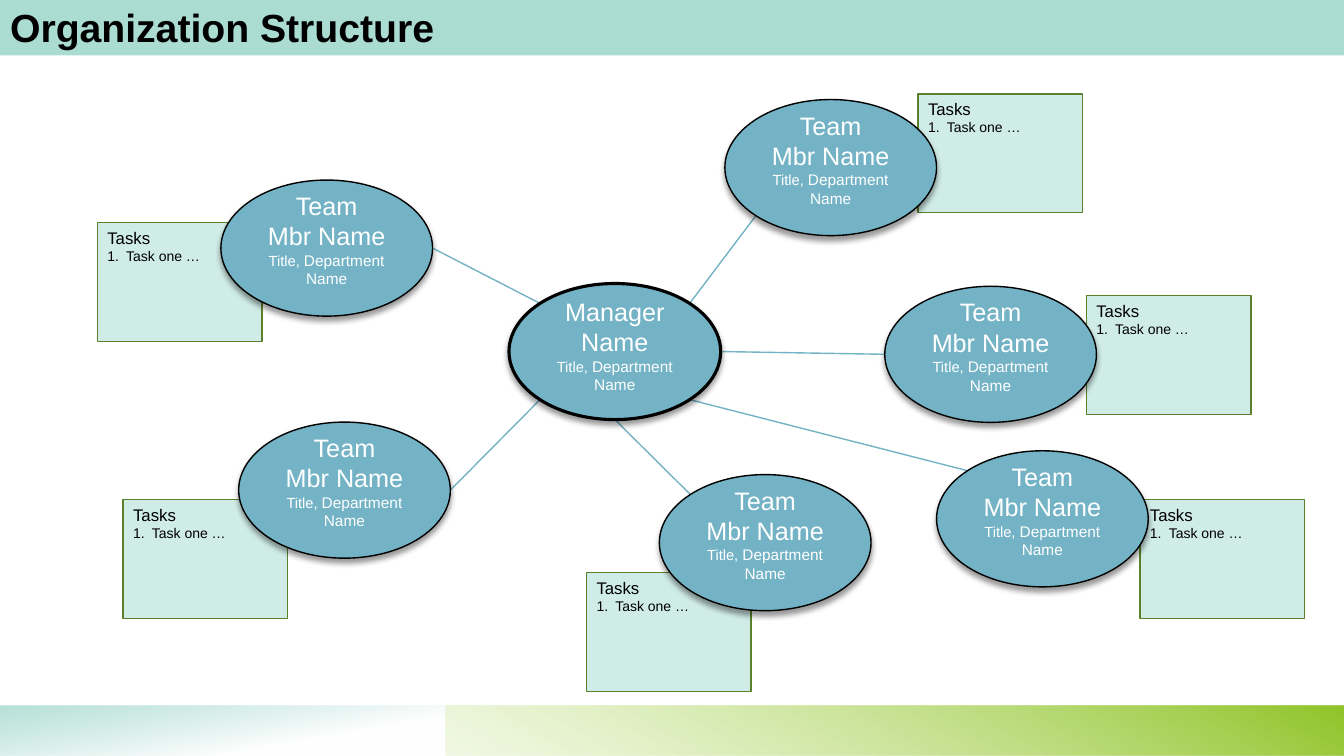
import math
from dataclasses import dataclass

import pptx
import pptx.dml.color
import pptx.enum.shapes
import pptx.enum.text
import pptx.oxml
import pptx.util
from lxml import etree

Pt = pptx.util.Pt
SHAPE = pptx.enum.shapes.MSO_SHAPE
ALIGN = pptx.enum.text.PP_ALIGN
ANCHOR = pptx.enum.text.MSO_ANCHOR
NS = "http://schemas.openxmlformats.org/drawingml/2006/main"


@dataclass(frozen=True)
class Theme:
    font: str = "Arial"
    black: str = "000000"
    white: str = "FFFFFF"
    band: str = "AADCD2"
    oval: str = "73B3C5"
    card: str = "D0ECE7"
    edge: str = "5C812C"
    pale: str = "E8F5CF"
    green: str = "91C52B"
    head: float = 28
    name: float = 18
    role: float = 11
    label: float = 10.5
    task: float = 12
    item: float = 10


THEME = Theme()
OVAL = (151.2, 97.2)
CARD = (117.6, 85)
HUB = (363.6, 202.5)
TEAM = [
    ((157.8, 128.6), (69.6, 159.1), 225, 0),
    ((517.8, 71.1), (655.8, 67), 315, 135),
    ((632, 204.5), (776, 211), 0, 180),
    ((669, 322), (814.3, 357), 45, 225),
    ((471, 339), (419, 409), 90, 225),
    ((170.5, 301.5), (88, 357), 135, 0),
]


def rgb(code):
    return pptx.dml.color.RGBColor.from_string(code)


def paint(shape, fill, edge=None, width=1):
    shape.fill.solid()
    shape.fill.fore_color.rgb = rgb(fill)
    if edge:
        shape.line.color.rgb = rgb(edge)
        shape.line.width = Pt(width)
    else:
        shape.line.fill.background()


def style(font, size, color, bold=False):
    font.name = THEME.font
    font.size = Pt(size)
    font.bold = bold
    font.color.rgb = rgb(color)


def add_form(slide, kind, spot, size):
    shape = slide.shapes.add_shape(kind, *map(Pt, spot + size))
    shape.shadow.inherit = False
    return shape


def add_fade(slide, spot, size, stops, angle):
    shape = add_form(slide, SHAPE.RECTANGLE, spot, size)
    shape.line.fill.background()
    marks = "".join(
        f'<a:gs pos="{pos * 1000}"><a:srgbClr val="{color}">'
        f'<a:alpha val="{alpha * 1000}"/></a:srgbClr></a:gs>'
        for pos, color, alpha in stops
    )
    fade = pptx.oxml.parse_xml(
        f'<a:gradFill xmlns:a="{NS}" rotWithShape="1"><a:gsLst>{marks}</a:gsLst>'
        f'<a:lin ang="{angle * 60000}" scaled="0"/></a:gradFill>'
    )
    shape.element.spPr.find(f"{{{NS}}}prstGeom").addnext(fade)


def add_title(slide, text):
    title = slide.shapes.title
    title.left, title.top, title.width, title.height = map(Pt, (0, -0.7, 960, 40.3))
    paint(title, THEME.band)
    frame = title.text_frame
    frame.text = text
    frame.auto_size = pptx.enum.text.MSO_AUTO_SIZE.NONE
    frame.vertical_anchor = ANCHOR.MIDDLE
    line = frame.paragraphs[0]
    line.alignment = ALIGN.LEFT
    style(line.font, THEME.head, THEME.black, True)


def add_card(slide, spot):
    card = add_form(slide, SHAPE.RECTANGLE, spot, CARD)
    paint(card, THEME.card, THEME.edge)
    frame = card.text_frame
    frame.vertical_anchor = ANCHOR.TOP
    frame.text = "Tasks\nTask one …"
    head, item = frame.paragraphs
    props = item._p.get_or_add_pPr()
    props.set("marL", str(Pt(13.5)))
    props.set("indent", str(-Pt(13.5)))
    etree.SubElement(props, f"{{{NS}}}buAutoNum", type="arabicPeriod")
    for line, size in ((head, THEME.task), (item, THEME.item)):
        line.alignment = ALIGN.LEFT
        style(line.font, size, THEME.black)


def add_oval(slide, spot, names, width=1, foot=16.2):
    oval = add_form(slide, SHAPE.OVAL, spot, OVAL)
    paint(oval, THEME.oval, THEME.black, width)
    glow = pptx.oxml.parse_xml(
        f'<a:outerShdw xmlns:a="{NS}" blurRad="{Pt(4)}" dist="{Pt(3)}" '
        f'dir="5400000" rotWithShape="0"><a:srgbClr val="{THEME.black}">'
        '<a:alpha val="40000"/></a:srgbClr></a:outerShdw>'
    )
    oval.element.spPr.find(f"{{{NS}}}effectLst").append(glow)
    frame = oval.text_frame
    frame.margin_left = frame.margin_right = 0
    frame.margin_top, frame.margin_bottom = Pt(3.6), Pt(foot)
    frame.vertical_anchor = ANCHOR.MIDDLE
    frame.text = "\n".join((*names, "Title, ", "Name"))
    sizes = (THEME.name, THEME.name, THEME.role, THEME.role)
    for line, size in zip(frame.paragraphs, sizes):
        line.alignment = ALIGN.CENTER
        style(line.font, size, THEME.white)
    role = frame.paragraphs[2]
    role.runs[0].font.size = Pt(THEME.label)
    role.add_run().text = "Department"


def rim(spot, angle):
    turn = math.radians(angle)
    wave = (math.cos(turn), math.sin(turn))
    return [Pt(at + side / 2 * (1 + part)) for at, side, part in zip(spot, OVAL, wave)]


def add_link(slide, start, end):
    kind = pptx.enum.shapes.MSO_CONNECTOR.STRAIGHT
    link = slide.shapes.add_connector(kind, *start, *end)
    link.line.color.rgb = rgb(THEME.oval)
    link.line.width = Pt(1)
    etree.SubElement(link.element.spPr, f"{{{NS}}}effectLst")


def main():
    deck = pptx.Presentation()
    deck.slide_width, deck.slide_height = Pt(960), Pt(540)
    slide = deck.slides.add_slide(deck.slide_layouts[5])
    add_title(slide, "Organization Structure")
    mist = [(69, THEME.white, 100), (100, THEME.band, 85)]
    leaf = [(0, THEME.pale, 55), (99, THEME.green, 100)]
    add_fade(slide, (0, 504), (960, 36), mist, 260)
    add_fade(slide, (318, 504), (642, 36), leaf, 300)
    for _, card, _, _ in TEAM:
        add_card(slide, card)
    for spot, _, out, into in TEAM:
        add_link(slide, rim(HUB, out), rim(spot, into))
    add_oval(slide, HUB, ("Manager", "Name"), 2.25, 12.8)
    for spot, _, _, _ in TEAM:
        add_oval(slide, spot, ("Team", "Mbr Name"))
    deck.save("out.pptx")


if __name__ == "__main__":
    main()
